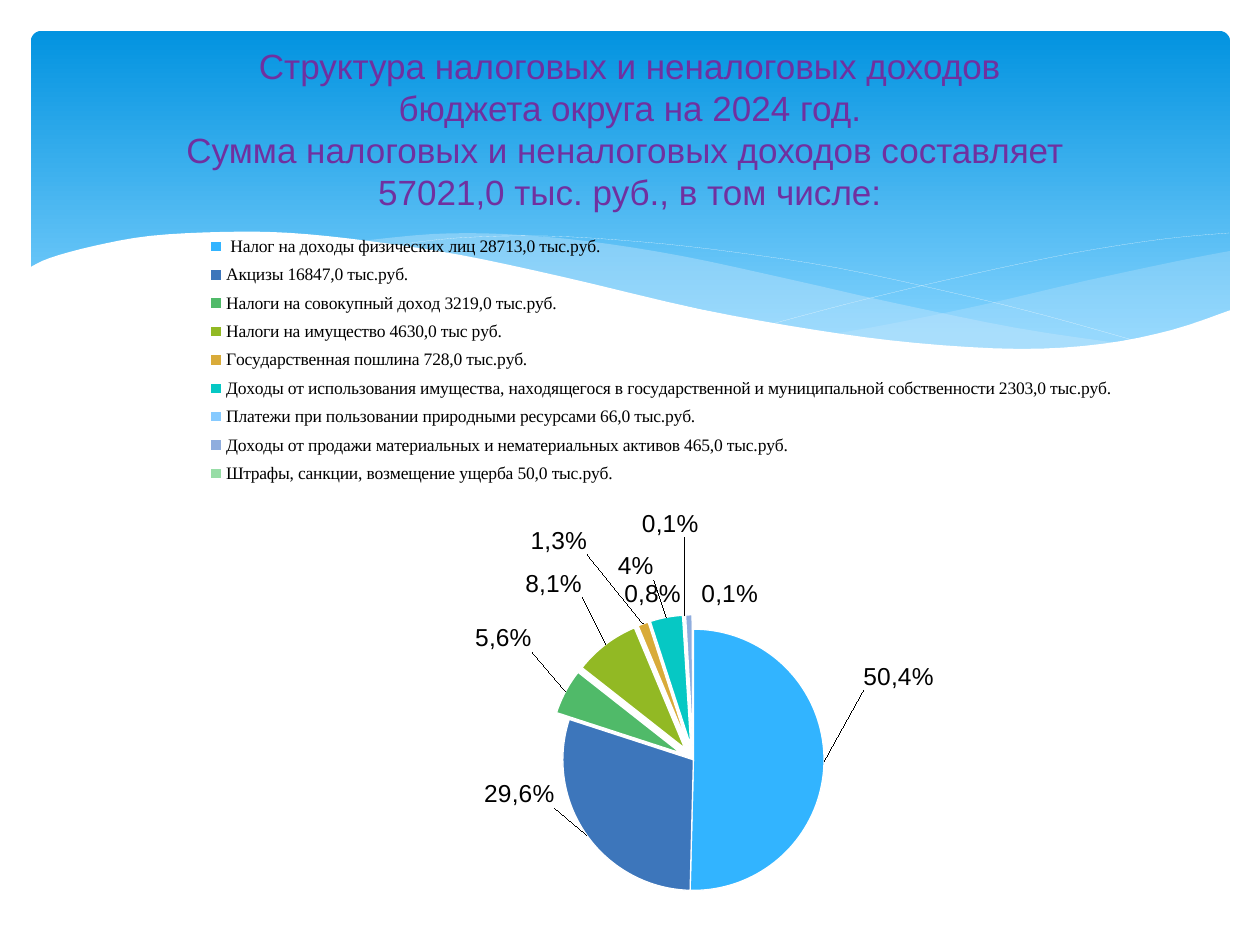
import pptx
import pptx.chart.data
import pptx.dml.color
import pptx.enum.chart
import pptx.enum.shapes
import pptx.enum.text
import pptx.oxml
import pptx.oxml.ns
import pptx.util

RGB = pptx.dml.color.RGBColor
SKY_TOP = RGB(0x02, 0x93, 0xE0)
SKY_BOTTOM = RGB(0x83, 0xD3, 0xFE)
MIST = RGB(0xC6, 0xE7, 0xFC)
WHITE = RGB(0xFF, 0xFF, 0xFF)
BLACK = RGB(0, 0, 0)
PURPLE = RGB(0x70, 0x30, 0xA0)

SCALE = 914400 / 126
CHART_BOX = (98, 227, 1103, 689)
PIE_AREA = (88, 388, 1015, 290)
LEGEND_AREA = (105, 1, 915, 264)

TITLE_LINES = [
    "Структура налоговых и неналоговых доходов",
    "бюджета округа на 2024 год.",
    "Сумма налоговых и неналоговых доходов составляет ",
    "57021,0 тыс. руб., в том числе:",
]

INCOME = [
    (" Налог на доходы физических лиц 28713,0 тыс.руб.", 50.4, RGB(0x32, 0xB4, 0xFF), "50,4%", (32, -85)),
    ("Акцизы 16847,0 тыс.руб.", 29.6, RGB(0x3D, 0x76, 0xBB), "29,6%", (-26, -59)),
    ("Налоги на совокупный доход 3219,0 тыс.руб.", 5.6, RGB(0x50, 0xBA, 0x69), "5,6%", (-27, -36)),
    ("Налоги на имущество 4630,0 тыс руб.", 8.1, RGB(0x92, 0xB9, 0x24), "8,1%", (-19, -41)),
    ("Государственная пошлина 728,0 тыс.руб. ", 1.3, RGB(0xD9, 0xAB, 0x39), "1,3%", (-53, -62)),
    ("Доходы от использования имущества, находящегося в государственной "
     "и муниципальной собственности 2303,0 тыс.руб.", 4, RGB(0x06, 0xC8, 0xC4), "4%", (-11, -30)),
    ("Платежи при пользовании природными ресурсами 66,0 тыс.руб.", 0.1, RGB(0x86, 0xCA, 0xFF), "0,1%", (-14, -70)),
    ("Доходы от продажи материальных и нематериальных активов 465,0 тыс.руб.", 0.8,
     RGB(0x8F, 0xAD, 0xDE), "0,8%", (-36, 0)),
    ("Штрафы, санкции, возмещение ущерба 50,0 тыс.руб.", 0.1, RGB(0x97, 0xDD, 0xA6), "0,1%", (37, 0)),
]

WAVE_EDGE = [(1231, 310), (1172, 330), (1102, 344), (1019, 349), (915, 343), (815, 330),
             (699, 309), (563, 277), (460, 255), (368, 241), (290, 233), (223, 232),
             (150, 236), (94, 246), (50, 258), (29, 268)]
SWELL_TOP = [(1230, 251), (1178, 261), (1085, 281), (982, 305), (890, 324), (833, 334)]
SWELL_BOTTOM = [(833, 334), (905, 343), (969, 349), (1026, 350), (1099, 345), (1160, 334), (1230, 311)]
RIBBON_TOP = [(1125, 344), (1017, 328), (890, 302), (793, 280), (682, 256), (586, 241),
              (503, 234), (433, 234), (360, 241)]
RIBBON_BOTTOM = [(360, 241), (456, 256), (566, 280), (668, 302), (779, 325), (876, 340),
                 (959, 349), (1031, 350), (1080, 349), (1125, 344)]
FALLING_LINE = [(389, 246), (457, 238), (546, 236), (643, 242), (733, 252), (838, 268),
                (958, 294), (1047, 316), (1143, 343)]
RISING_LINE = [(772, 324), (847, 304), (942, 281), (1053, 257), (1128, 244), (1182, 237), (1229, 233)]


def px(length):
    return pptx.util.Emu(round(length * SCALE))


def smooth(knots, steps=4):
    padded = [knots[0], *knots, knots[-1]]
    curve = []
    for a, b, c, d in zip(padded, padded[1:], padded[2:], padded[3:]):
        for step in range(steps):
            t = step / steps
            curve.append(tuple(
                q + t / 2 * (r - p + t * (2 * p - 5 * q + 4 * r - s + t * (3 * (q - r) + s - p)))
                for p, q, r, s in zip(a, b, c, d)))
    return curve + [knots[-1]]


def xml(tag, content="", attributes=""):
    namespaces = pptx.oxml.ns.nsdecls(tag.split(":")[0])
    return pptx.oxml.parse_xml(f"<{tag} {namespaces} {attributes}>{content}</{tag}>")


def set_layout(parent, index, lengths, modes=""):
    for old in parent.findall(pptx.oxml.ns.qn("c:layout")):
        parent.remove(old)
    _, _, width, height = CHART_BOX
    items = "".join(f'<c:{key} val="{length / whole:.4f}"/>'
                    for key, length, whole in zip("xywh", lengths, (width, height) * 2))
    parent.insert(index, xml("c:layout", f"<c:manualLayout>{modes}{items}</c:manualLayout>"))


class IncomeSlide:
    def __init__(self, deck):
        self.slide = deck.slides.add_slide(deck.slide_layouts[5])
        self.shapes = self.slide.shapes
        self.label_font = "Arial"
        self.legend_font = "Times New Roman"
        self.chart_font = "Cabin"

    def style(self, font, name, size, color):
        font.name = name
        font.size = pptx.util.Pt(size)
        font.color.rgb = color

    def sky(self, left, top, width, height):
        panel = self.shapes.add_shape(pptx.enum.shapes.MSO_SHAPE.ROUNDED_RECTANGLE,
                                      px(left), px(top), px(width), px(height))
        panel.shadow.inherit = False
        panel.adjustments[0] = 0.03
        panel.line.fill.background()
        panel.fill.gradient()
        panel.fill.gradient_angle = 270
        for stop, color, position in zip(panel.fill.gradient_stops, (SKY_TOP, SKY_BOTTOM), (0, 0.9)):
            stop.color.rgb = color
            stop.position = position

    def outline(self, points, closed):
        start, *rest = [(px(x), px(y)) for x, y in points]
        builder = self.shapes.build_freeform(*start)
        builder.add_line_segments(rest, close=closed)
        figure = builder.convert_to_shape()
        figure.shadow.inherit = False
        return figure

    def area(self, points, color, opacity=100):
        figure = self.outline(points, True)
        figure.line.fill.background()
        figure.fill.solid()
        figure.fill.fore_color.rgb = color
        if opacity < 100:
            tint = figure.element.spPr.find(".//" + pptx.oxml.ns.qn("a:srgbClr"))
            tint.append(xml("a:alpha", attributes=f'val="{opacity * 1000}"'))

    def hairline(self, points):
        figure = self.outline(points, False)
        figure.fill.background()
        figure.line.color.rgb = WHITE
        figure.line.width = pptx.util.Pt(0.05)

    def title(self, lines, left, top, width, height):
        heading = self.shapes.title
        heading.left, heading.top, heading.width, heading.height = map(px, (left, top, width, height))
        frame = heading.text_frame
        frame.word_wrap = True
        frame.vertical_anchor = pptx.enum.text.MSO_ANCHOR.MIDDLE
        paragraph = frame.paragraphs[0]
        paragraph.alignment = pptx.enum.text.PP_ALIGN.CENTER
        paragraph.line_spacing = pptx.util.Pt(24)
        for number, line in enumerate(lines):
            if number:
                paragraph.add_line_break()
            run = paragraph.add_run()
            run.text = line
            self.style(run.font, self.label_font, 20, PURPLE)
        heading.element.getparent().append(heading.element)

    def pie(self, rows):
        data = pptx.chart.data.CategoryChartData(number_format="0.0")
        data.categories = [row[0] for row in rows]
        data.add_series("Столбец2", [row[1] for row in rows])
        chart = self.shapes.add_chart(pptx.enum.chart.XL_CHART_TYPE.PIE, *map(px, CHART_BOX), data).chart
        chart.has_title = False
        self.style(chart.font, self.chart_font, 18, BLACK)
        chart.plots[0].vary_by_categories = True
        edges = '<c:xMode val="edge"/><c:yMode val="edge"/>'
        plot_area = chart.element.find(".//" + pptx.oxml.ns.qn("c:plotArea"))
        set_layout(plot_area, 0, PIE_AREA, '<c:layoutTarget val="inner"/>' + edges)

        chart.has_legend = True
        chart.legend.position = pptx.enum.chart.XL_LEGEND_POSITION.TOP
        chart.legend.include_in_layout = False
        self.style(chart.legend.font, self.legend_font, 10, BLACK)
        legend = chart.element.find(".//" + pptx.oxml.ns.qn("c:legend"))
        set_layout(legend, 1, LEGEND_AREA, edges)

        series = chart.plots[0].series[0]
        series._element.find(pptx.oxml.ns.qn("c:tx")).addnext(xml("c:explosion", attributes='val="11"'))
        labels = series.data_labels
        labels.show_percentage = True
        labels.show_value = False
        labels.number_format = "0.0%"
        labels.number_format_is_linked = False
        labels.position = pptx.enum.chart.XL_LABEL_POSITION.OUTSIDE_END
        self.style(labels.font, self.label_font, 14, BLACK)
        leader = labels._element.find(pptx.oxml.ns.qn("c:showLeaderLines"))
        if leader is None:
            labels._element.append(xml("c:showLeaderLines", attributes='val="1"'))
        else:
            leader.set("val", "1")

        for index, (_, _, color, text, shift) in enumerate(rows):
            self.slice(series.points[index], color, 0 if index < 2 else 11)
            self.slice_label(series, index, text, shift)

    def slice(self, point, color, explosion):
        point.format.fill.solid()
        point.format.fill.fore_color.rgb = color
        point.format.line.color.rgb = WHITE
        point.format.line.width = pptx.util.Pt(0.75)
        properties = point.format._element.find(pptx.oxml.ns.qn("c:spPr"))
        properties.addprevious(xml("c:explosion", attributes=f'val="{explosion}"'))

    def slice_label(self, series, index, text, shift):
        label = series.points[index].data_label
        run = label.text_frame.paragraphs[0].add_run()
        run.text = text
        self.style(run.font, self.label_font, 14, BLACK)
        label.position = pptx.enum.chart.XL_LABEL_POSITION.OUTSIDE_END
        element = series.data_labels._element.findall(pptx.oxml.ns.qn("c:dLbl"))[index]
        set_layout(element, 1, shift)


def main():
    deck = pptx.Presentation()
    deck.slide_width, deck.slide_height = px(1260), px(945)
    page = IncomeSlide(deck)
    page.sky(31, 31, 1199, 340)
    page.area(smooth(SWELL_TOP) + smooth(SWELL_BOTTOM), MIST, 29)
    page.area(smooth(RIBBON_TOP) + smooth(RIBBON_BOTTOM), MIST, 40)
    page.hairline(smooth(FALLING_LINE))
    page.hairline(smooth(RISING_LINE))
    page.area(smooth(WAVE_EDGE) + [(29, 415), (1231, 415)], WHITE)
    page.pie(INCOME)
    page.title(TITLE_LINES, 63, 42, 1134, 173)
    deck.save("out.pptx")


if __name__ == "__main__":
    main()
